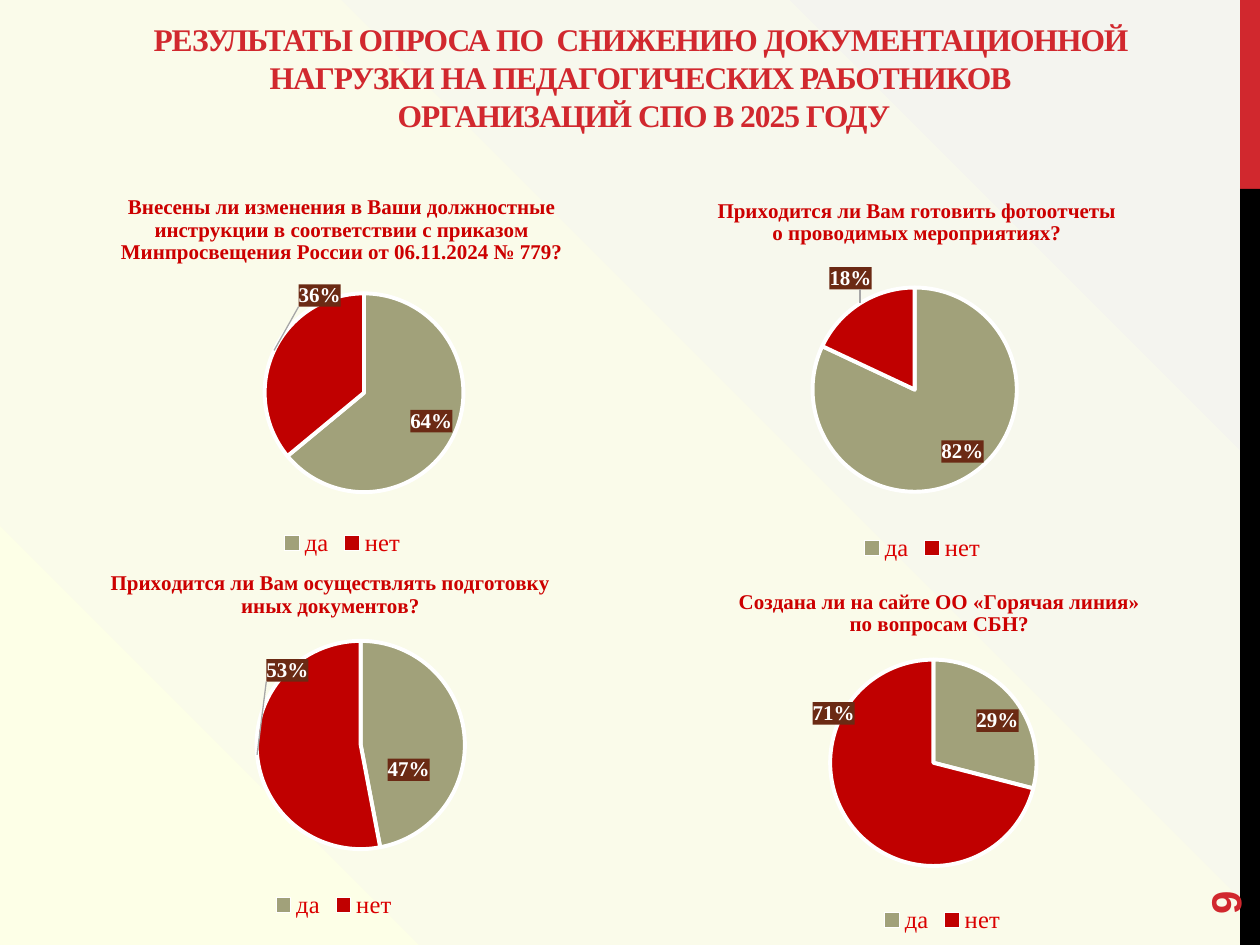
from math import cos, copysign, pi, sin

from lxml.etree import SubElement
from pptx import Presentation
from pptx.chart.data import CategoryChartData
from pptx.dml.color import RGBColor
from pptx.enum.chart import XL_CHART_TYPE, XL_LEGEND_POSITION
from pptx.enum.shapes import MSO_SHAPE
from pptx.enum.text import MSO_ANCHOR, PP_ALIGN
from pptx.oxml import parse_xml
from pptx.oxml.ns import nsdecls, qn
from pptx.util import Emu, Pt

SCALE = 914400 / 126
SERIF, SANS = "Times New Roman", "Arial"
RED, DARK, WHITE = "D1282E", "CC0000", "FFFFFF"
SLICES = ["A1A17A", "C00000"]
HALF, GAP = (21, 11), 7  # half size of a value label, its gap to the pie


def px(num):
    return Emu(round(num * SCALE))


def color(code):
    return RGBColor.from_string(code)


def layout(**vals):
    """Manual chart layout, with fractions of the chart size."""
    node = parse_xml(f"<c:layout {nsdecls('c')}><c:manualLayout/></c:layout>")
    for tag, val in vals.items():
        SubElement(node[0], qn("c:" + tag)).set("val", str(val))
    return node


class Deck:
    def __init__(self, wide, high):
        self.prs = Presentation()
        self.prs.slide_width, self.prs.slide_height = px(wide), px(high)
        self.slide = self.prs.slides.add_slide(self.prs.slide_layouts[6])
        self.shapes = self.slide.shapes

    def back(self, stops):
        fill = self.slide.background.fill
        fill.gradient()
        grad = self.slide.background._cSld.find(".//" + qn("a:gradFill"))
        for child in list(grad):
            grad.remove(child)
        group = SubElement(grad, qn("a:gsLst"))
        for pos, code in stops:
            stop = SubElement(group, qn("a:gs"))
            stop.set("pos", str(pos * 1000))
            SubElement(stop, qn("a:srgbClr")).set("val", code)
        round_ = SubElement(grad, qn("a:path"))
        round_.set("path", "circle")
        focus = SubElement(round_, qn("a:fillToRect"))
        focus.set("t", "100000")
        focus.set("r", "100000")

    def font(self, font, face, size, code, bold=True):
        font.name, font.size, font.bold = face, Pt(size), bold
        font.color.rgb = color(code)

    def rect(self, box, code):
        shape = self.shapes.add_shape(MSO_SHAPE.RECTANGLE, *map(px, box))
        shape.shadow.inherit = False
        shape.fill.solid()
        shape.fill.fore_color.rgb = color(code)
        shape.line.fill.background()

    def text(self, box, lines, face, size, code, align, anchor, turn=0, space=0):
        shape = self.shapes.add_textbox(*map(px, box))
        shape.rotation = turn
        frame = shape.text_frame
        frame.word_wrap, frame.vertical_anchor = True, anchor
        par = frame.paragraphs[0]
        par.alignment = align
        for num, line in enumerate(lines):
            if num:
                par.add_line_break()
            run = par.add_run()
            run.text = line
            self.font(run.font, face, size, code)
            if space:
                run.font._element.set("spc", str(space))

    def pie(self, box, lines, head, plot, share, spots):
        left, top, wide, high = box
        data = CategoryChartData(number_format="0%")
        data.categories = ["да", "нет"]
        data.add_series("Series 1", [share, round(1 - share, 2)])
        chart = self.shapes.add_chart(XL_CHART_TYPE.PIE, *map(px, box), data).chart
        chart.font.name, chart.font.size = SANS, Pt(10)

        # Title
        chart.has_title = True
        frame = chart.chart_title.text_frame
        for num, line in enumerate(lines):
            par = frame.add_paragraph() if num else frame.paragraphs[0]
            run = par.add_run()
            run.text = line
            self.font(run.font, SERIF, 12, DARK)
        node = chart.chart_title._element
        for old in node.findall(qn("c:layout")):
            node.remove(old)
        node.find(qn("c:tx")).addnext(layout(
            xMode="edge", yMode="edge",
            x=round((head[0] - left) / wide, 3), y=round((head[1] - top) / high, 3)))

        # Legend and plot area
        chart.has_legend = True
        chart.legend.position = XL_LEGEND_POSITION.BOTTOM
        chart.legend.include_in_layout = False
        self.font(chart.legend.font, SERIF, 14, "DA0000", False)
        area = chart._chartSpace.find(".//" + qn("c:plotArea"))
        for old in area.findall(qn("c:layout")):
            area.remove(old)
        area.insert(0, layout(layoutTarget="inner", xMode="edge", yMode="edge",
                              **dict(zip("xywh", plot))))

        # Slices
        chart.plots[0].vary_by_categories = True
        series = chart.plots[0].series[0]
        for num, code in enumerate(SLICES):
            form = series.points[num].format
            form.fill.solid()
            form.fill.fore_color.rgb = color(code)
            form.line.color.rgb = color(WHITE)
            form.line.width = Pt(2.25)

        # Value labels with grey leader lines
        tags = series.data_labels
        tags.show_value = True
        tags.number_format, tags.number_format_is_linked = "0%", False
        self.font(tags.font, SERIF, 12, WHITE)
        tags._element.find(qn("c:numFmt")).addnext(parse_xml(
            f"<c:spPr {nsdecls('c', 'a')}><a:solidFill><a:srgbClr val='6B2A14'/>"
            "</a:solidFill></c:spPr>"))
        lead = tags._element.find(qn("c:showLeaderLines"))
        if lead is None:
            lead = SubElement(tags._element, qn("c:showLeaderLines"))
        lead.set("val", "1")
        lead.addnext(parse_xml(
            f"<c:leaderLines {nsdecls('c', 'a')}><c:spPr><a:ln w='9525'><a:solidFill>"
            "<a:srgbClr val='A6A6A6'/></a:solidFill></a:ln></c:spPr></c:leaderLines>"))

        # Shift each label from its place outside the pie to its spot
        mid = left + (plot[0] + plot[2] / 2) * wide, top + (plot[1] + plot[3] / 2) * high
        reach = min(plot[2] * wide, plot[3] * high) / 2 + GAP
        for num, spot in enumerate(spots):
            turn = pi * (share + num)
            shift = [spot[i] - mid[i] - reach * way - copysign(HALF[i], way)
                     for i, way in enumerate((sin(turn), -cos(turn)))]
            self.font(series.points[num].data_label.font, SERIF, 12, WHITE)
            tag = tags._element.findall(qn("c:dLbl"))[num]
            tag.find(qn("c:idx")).addnext(layout(
                x=round(shift[0] / wide, 3), y=round(shift[1] / high, 3)))


deck = Deck(1260, 945)
deck.back([(0, "FDFFE7"), (38, "FAFBEA"), (99, "F4F4EF")])

# Side bar
deck.rect((1240, 0, 20, 189), RED)
deck.rect((1240, 189, 20, 756), "000000")

# Heading and page number
deck.text((64, 16, 1153, 124),
          ["РЕЗУЛЬТАТЫ ОПРОСА ПО  СНИЖЕНИЮ ДОКУМЕНТАЦИОННОЙ "
           "НАГРУЗКИ НА ПЕДАГОГИЧЕСКИХ РАБОТНИКОВ", " ОРГАНИЗАЦИЙ СПО В 2025 ГОДУ"],
          SERIF, 18, RED, PP_ALIGN.CENTER, MSO_ANCHOR.BOTTOM, space=-60)
deck.text((1134, 811, 181, 50), ["9"], SANS, 24, RED,
          PP_ALIGN.LEFT, MSO_ANCHOR.MIDDLE, turn=270)

# Survey charts: box, title, title corner, plot, share of "да", label centres
for item in [
    ((15, 175, 655, 387),
     ["Внесены ли изменения в Ваши должностные инструкции в соответствии "
      "с приказом Минпросвещения России от 06.11.2024 № 779?"],
     (117, 190), (0.095, 0.306, 0.876, 0.514), 0.64, [(431, 421), (320, 296)]),
    ((15, 552, 638, 372),
     ["Приходится ли Вам осуществлять подготовку", "иных документов?"],
     (107, 566), (0.109, 0.239, 0.866, 0.56), 0.47, [(408, 770), (288, 670)]),
    ((610, 180, 625, 387),
     ["Приходится ли Вам готовить фотоотчеты", "о проводимых мероприятиях?"],
     (714, 194), (0.068, 0.278, 0.839, 0.528), 0.82, [(962, 451), (851, 279)]),
    ((630, 571, 625, 368),
     ["Создана ли на сайте ОО «Горячая линия»", "по вопросам СБН?"],
     (735, 585), (0.034, 0.241, 0.903, 0.561), 0.29, [(997, 721), (834, 713)]),
]:
    deck.pie(*item)

deck.prs.save("out.pptx")
